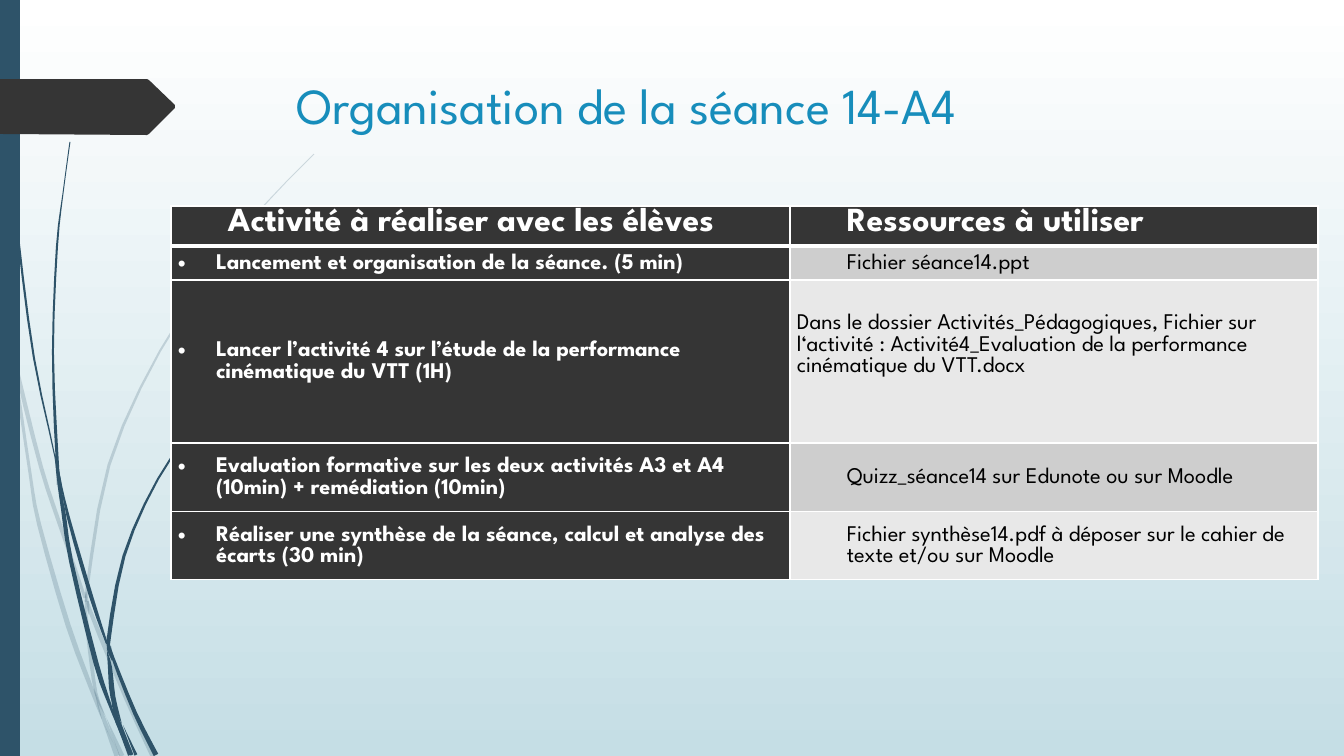
from math import hypot

from lxml import etree
from pptx import Presentation
from pptx import util as u
from pptx.dml.color import RGBColor
from pptx.enum import shapes, text
from pptx.oxml.ns import qn

EMU_PER_PX = 914400 / 100.8
FONT = "League Spartan"
COLORS = {
    "white": "FFFFFF", "black": "000000", "mist": "C5DEE5", "blue": "2E5369",
    "dark": "353535", "title": "178DBB", "band": "CECECE", "pale": "E8E8E8",
}

# Grass: each piece of a blade is a centre line with its thickness (x, y, width)
PALE_GRASS = [
    [(0, 292, 3), (11, 353, 0)],
    [(14, 348, 0), (19, 379, 4), (41, 467, 4), (60, 525, 4), (85, 598, 3)],
    [(89, 601, 0), (91, 613, 4), (126, 698, 4), (153, 756, 5)],
    [(106, 717, 0), (122, 756, 5)],
    [(11, 353, 0), (16, 379, 3), (30, 473, 3), (39, 524, 4), (68, 625, 5),
     (93, 693, 4), (102, 720, 0)],
    [(85, 604, 0), (86, 615, 3), (90, 651, 4), (96, 693, 3), (106, 717, 0)],
    [(314, 154, 1), (270, 199, 1), (230, 247, 2), (160, 351, 2), (109, 465, 3),
     (87, 589, 3), (88, 601, 0)],
    [(102, 720, 0), (117, 756, 5)],
    [(86, 591, 0), (87, 603, 4), (89, 615, 0)],
    [(94, 688, 0), (103, 717, 4), (120, 756, 0)],
]
DARK_GRASS = [
    [(4, 0, 1), (7, 110, 1), (18, 235, 2), (34, 358, 2), (55, 457, 1), (57, 485, 0)],
    [(60, 476, 0), (68, 516, 3), (91, 596, 4), (107, 644, 2)],
    [(111, 646, 0), (113, 658, 3), (135, 713, 4), (156, 755, 5)],
    [(57, 481, 0), (63, 509, 4), (71, 561, 4), (96, 663, 5), (110, 705, 3), (118, 728, 0)],
    [(70, 142, 1), (63, 194, 1), (57, 247, 2), (53, 352, 2), (57, 455, 3), (60, 476, 0)],
    [(123, 725, 0), (136, 755, 3)],
    [(55, 453, 0), (59, 480, 4), (64, 509, 0)],
    [(262, 347, 1), (232, 377, 1), (206, 409, 2), (158, 479, 2), (124, 556, 3),
     (109, 637, 4), (111, 646, 0)],
    [(118, 728, 0), (130, 755, 4)],
    [(107, 650, 0), (110, 667, 4), (113, 697, 5), (122, 724, 0)],
    [(107, 636, 0), (109, 649, 4), (112, 661, 0)],
    [(111, 697, 0), (118, 722, 5), (132, 755, 3)],
]
PAGE_TAG = [(0, 79), (147, 79), (149, 80), (175, 105), (175, 108), (149, 134),
            (147, 135), (0, 134)]

HEADER = ("Activité à réaliser avec les élèves", "Ressources à utiliser")
ACTIVITIES = [
    ("Lancement et organisation de la séance. (5 min)", "Fichier séance14.ppt"),
    ("Lancer l’activité 4 sur l’étude de la performance cinématique du VTT (1H)",
     "Dans le dossier Activités_Pédagogiques, Fichier sur l‘activité : "
     "Activité4_Evaluation de la performance cinématique du VTT.docx"),
    ("Evaluation formative sur les deux activités A3 et A4 (10min) + remédiation (10min)",
     "Quizz_séance14 sur Edunote ou sur Moodle"),
    ("Réaliser une synthèse de la séance, calcul et analyse des écarts (30 min)",
     "Fichier synthèse14.pdf à déposer sur le cahier de texte et/ou sur Moodle"),
]
COL_WIDTHS = (619, 528)
ROW_HEIGHTS = (40, 34, 163, 69, 68)
UNINDENTED_ROW = 2


def px(n):
    return u.Emu(round(n * EMU_PER_PX))


def rgb(name):
    return RGBColor.from_string(COLORS[name])


def set_all(obj, values):
    for name, value in values.items():
        setattr(obj, name, value)


def style_run(r, size, color, bold=False):
    set_all(r.font, {"name": FONT, "size": u.Pt(size), "bold": bold})
    r.font.color.rgb = rgb(color)


def paint(sp, color, opacity=100):
    sp.shadow.inherit = False
    sp.fill.solid()
    sp.fill.fore_color.rgb = rgb(color)
    sp.line.fill.background()
    if opacity < 100:
        clr = sp.fill._xPr.find(qn("a:solidFill"))[0]
        etree.SubElement(clr, qn("a:alpha")).set("val", str(opacity * 1000))


def add_outline(s, pts, color, opacity=100):
    corners = [(px(x), px(y)) for x, y in pts]
    fb = s.shapes.build_freeform(*corners[0])
    fb.add_line_segments(corners[1:], close=True)
    paint(fb.convert_to_shape(), color, opacity)


def smooth(pts, steps=3):
    """Catmull-Rom curve through the points, thickness included."""
    if len(pts) == 2:
        return pts
    ext = [pts[0], *pts, pts[-1]]
    curve = []
    for a, b, c, d in zip(ext, ext[1:], ext[2:], ext[3:]):
        for i in range(steps):
            t = i / steps
            curve.append(tuple(
                (2 * q + (m - k) * t + (2 * k - 5 * q + 4 * m - n) * t ** 2
                 + (3 * q - k - 3 * m + n) * t ** 3) / 2
                for k, q, m, n in zip(a, b, c, d)))
    return curve + [pts[-1]]


def add_blade(s, pts, opacity):
    curve = smooth(pts)
    left, right = [], []
    for i, (x, y, w) in enumerate(curve):
        before, after = curve[max(i - 1, 0)], curve[min(i + 1, len(curve) - 1)]
        dx, dy = after[0] - before[0], after[1] - before[1]
        k = max(w, 0) / 2 / hypot(dx, dy)
        left.append((x + dy * k, y - dx * k))
        right.append((x - dy * k, y + dx * k))
    add_outline(s, left + right[::-1], "blue", opacity)


def add_backdrop(s, height):
    # Sky gradient, top to bottom
    fill = s.background.fill
    fill.gradient()
    fill.gradient_angle = 270
    for stop, color, pos in zip(fill.gradient_stops, ("white", "mist"), (0, 1)):
        stop.color.rgb = rgb(color)
        stop.position = pos
    # Grass
    for blades, opacity in ((PALE_GRASS, 20), (DARK_GRASS, 100)):
        for pts in blades:
            add_blade(s, pts, opacity)
    # Side bar and page tag
    bar = s.shapes.add_shape(shapes.MSO_SHAPE.RECTANGLE, 0, 0, px(20), px(height))
    paint(bar, "blue")
    add_outline(s, PAGE_TAG, "dark")


def add_title(s, x, y, w, h):
    sp = s.shapes.title
    set_all(sp, {"left": px(x), "top": px(y), "width": px(w), "height": px(h)})
    tf = sp.text_frame
    set_all(tf, {"word_wrap": True, "auto_size": text.MSO_AUTO_SIZE.NONE,
                 "vertical_anchor": text.MSO_ANCHOR.TOP})
    p = tf.paragraphs[0]
    p.alignment = text.PP_ALIGN.LEFT
    r = p.add_run()
    r.text = "Organisation de la séance 14-A4"
    style_run(r, 36, "title")


def set_borders(cell, row):
    tcPr = cell._tc.get_or_add_tcPr()
    thick = {0: "lnB", 1: "lnT"}.get(row)
    for side in ("lnL", "lnR", "lnT", "lnB"):
        ln = etree.SubElement(tcPr, qn(f"a:{side}"))
        ln.set("w", str(u.Pt(3 if side == thick else 1)))
        fill = etree.SubElement(ln, qn("a:solidFill"))
        etree.SubElement(fill, qn("a:srgbClr")).set("val", COLORS["white"])


def fill_cell(cell, content, row, col):
    header, bulleted = row == 0, row > 0 and col == 0
    plain = row == UNINDENTED_ROW and col == 1
    dark = header or bulleted
    set_borders(cell, row)
    cell.fill.solid()
    cell.fill.fore_color.rgb = rgb("dark" if dark else "band" if row % 2 else "pale")
    set_all(cell, {
        "margin_left": px(7), "margin_right": px(7), "margin_top": 0,
        "margin_bottom": px(33 if plain else 0),
        "vertical_anchor": text.MSO_ANCHOR.TOP if header else text.MSO_ANCHOR.MIDDLE})
    p = cell.text_frame.paragraphs[0]
    p.line_spacing = 1.07
    pPr = p._p.get_or_add_pPr()
    pPr.set("marL", str(px(38 if bulleted else 0 if plain else 50)))
    pPr.set("indent", str(px(-38 if bulleted else 0)))
    if bulleted:
        etree.SubElement(pPr, qn("a:buFont")).set("typeface", "Arial")
        etree.SubElement(pPr, qn("a:buChar")).set("char", "•")
    r = p.add_run()
    r.text = content
    style_run(r, 24 if header else 16, "white" if dark else "black", dark)


def add_schedule(s, x, y):
    rows = [HEADER, *ACTIVITIES]
    tbl = s.shapes.add_table(len(rows), len(HEADER), px(x), px(y),
                             px(sum(COL_WIDTHS)), px(sum(ROW_HEIGHTS))).table
    tbl.horz_banding = False
    for column, w in zip(tbl.columns, COL_WIDTHS):
        column.width = px(w)
    for i, (row, h) in enumerate(zip(rows, ROW_HEIGHTS)):
        tbl.rows[i].height = px(h)
        for j, content in enumerate(row):
            fill_cell(tbl.cell(i, j), content, i, j)


prs = Presentation()
set_all(prs, {"slide_width": px(1344), "slide_height": px(756)})
s = prs.slides.add_slide(prs.slide_layouts[5])
add_backdrop(s, 756)
add_title(s, 286, 69, 983, 141)
add_schedule(s, 171, 206)
prs.save("out.pptx")
